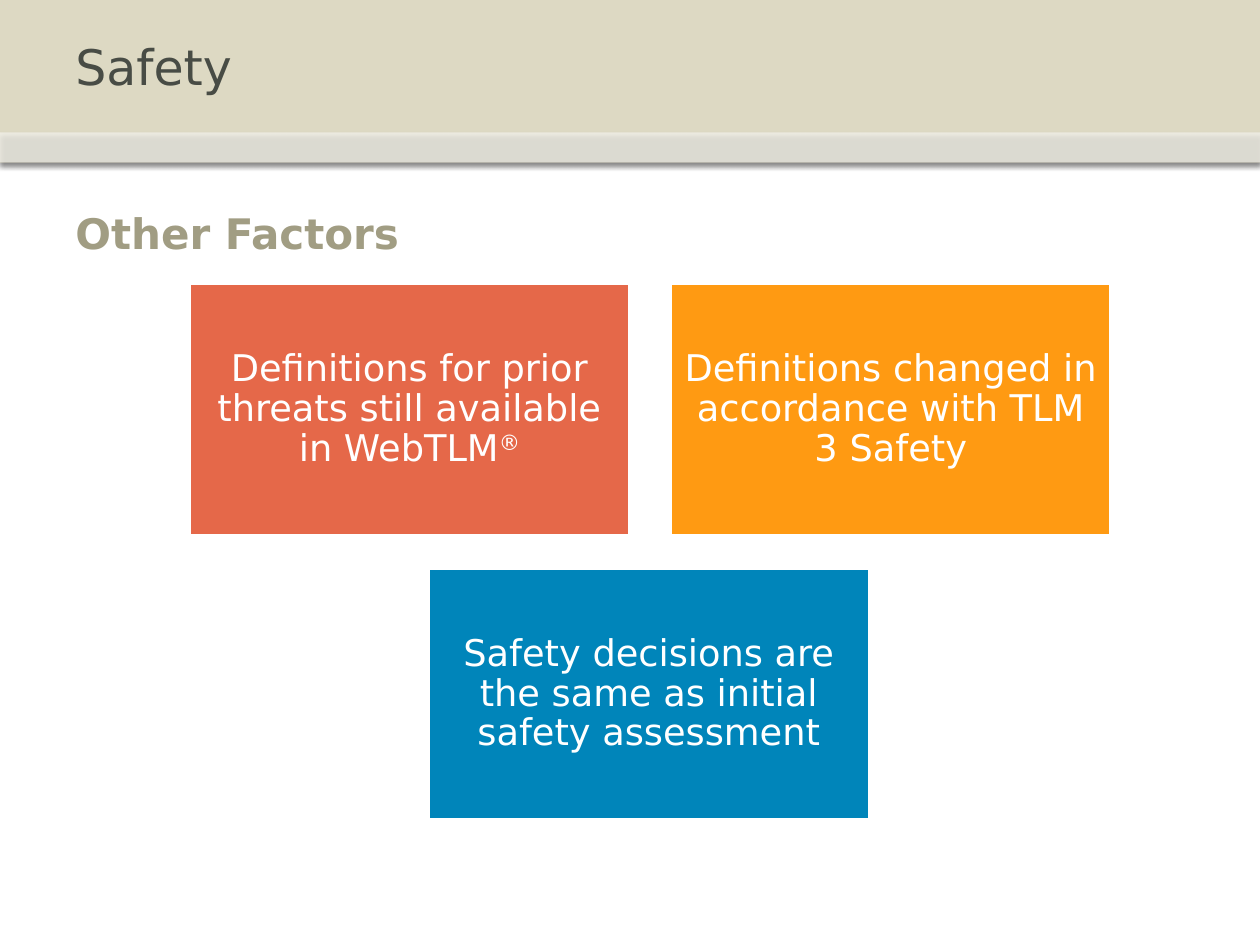
from lxml import etree
from pptx import Presentation
from pptx.dml.color import RGBColor
from pptx.enum.shapes import MSO_SHAPE
from pptx.enum.text import MSO_ANCHOR, PP_ALIGN
from pptx.oxml import parse_xml
from pptx.oxml.ns import nsdecls, qn
from pptx.util import Inches, Pt

RECT = MSO_SHAPE.RECTANGLE
MIDDLE, BOTTOM = MSO_ANCHOR.MIDDLE, MSO_ANCHOR.BOTTOM
LEFT, CENTER = PP_ALIGN.LEFT, PP_ALIGN.CENTER

WHITE = RGBColor(0xFF, 0xFF, 0xFF)
SAND = RGBColor(0xDD, 0xD9, 0xC3)
INK = RGBColor(0x48, 0x4C, 0x45)
OLIVE = RGBColor(0xA1, 0x9D, 0x83)
CORAL = RGBColor(0xE5, 0x68, 0x49)
AMBER = RGBColor(0xFF, 0x9A, 0x12)
BLUE = RGBColor(0x00, 0x85, 0xBA)

SHADOW = (
    f'<a:effectLst {nsdecls("a")}>'
    '<a:outerShdw blurRad="39370" dist="22860" dir="5400000" rotWithShape="0">'
    '<a:srgbClr val="000000"><a:alpha val="35000"/></a:srgbClr>'
    '</a:outerShdw></a:effectLst>'
)


def write(frame, text, size=21, color=WHITE, bold=False, align=LEFT,
          anchor=MIDDLE, space=1.0, font="DejaVu Sans", mark=""):
    frame.word_wrap = True
    frame.vertical_anchor = anchor
    para = frame.paragraphs[0]
    para.alignment = align
    para.line_spacing = space
    for part in filter(None, (text, mark)):
        run = para.add_run()
        run.text = part
        run.font.name = font
        run.font.size = Pt(size)
        run.font.bold = bold
        run.font.color.rgb = color
        if part == mark:
            run.font._element.set("baseline", "30000")


class Deck:
    pad = Inches(0.09)
    edge = Pt(2)

    def __init__(self, slide):
        self.slide = slide

    def block(self, left, top, width, height, color):
        shape = self.slide.shapes.add_shape(
            RECT, Inches(left), Inches(top), Inches(width), Inches(height))
        shape.fill.solid()
        shape.fill.fore_color.rgb = color
        shape.line.fill.background()
        shape.shadow.inherit = False
        return shape

    def band(self, top, height, color, alpha=100):
        props = self.block(0, top, 10, height, color)._element.spPr
        tint = props.find(qn("a:solidFill"))[0]
        if alpha < 100:
            etree.SubElement(tint, qn("a:alpha")).set("val", str(alpha * 1000))
        props.replace(props.find(qn("a:effectLst")), parse_xml(SHADOW))

    def label(self, left, top, width, height, text, **style):
        box = self.slide.shapes.add_textbox(
            Inches(left), Inches(top), Inches(width), Inches(height))
        write(box.text_frame, text, **style)

    def card(self, left, top, color, text, mark=""):
        shape = self.block(left, top, 3.5, 2, color)
        shape.line.color.rgb = WHITE
        shape.line.width = self.edge
        frame = shape.text_frame
        frame.margin_left = frame.margin_right = self.pad
        frame.margin_top = frame.margin_bottom = self.pad
        write(frame, text, align=CENTER, space=0.9, mark=mark)


def main():
    show = Presentation()
    show.slide_width, show.slide_height = Inches(10), Inches(7.5)
    deck = Deck(show.slides.add_slide(show.slide_layouts[6]))

    deck.band(0, 1.29, SAND)
    deck.band(1.05, 0.24, WHITE, alpha=53)
    deck.label(0.5, 0, 9, 1.05, "Safety", size=28, color=INK)
    deck.label(0.5, 1.63, 7.41, 0.47, "Other Factors", size=24,
               color=OLIVE, bold=True, anchor=BOTTOM)

    deck.card(1.5, 2.25, CORAL,
              "Definitions for prior threats still available in WebTLM", "®")
    deck.card(5.32, 2.25, AMBER,
              "Definitions changed in accordance with TLM 3 Safety")
    deck.card(3.4, 4.51, BLUE,
              "Safety decisions are the same as initial safety assessment")

    show.save("out.pptx")


if __name__ == "__main__":
    main()
